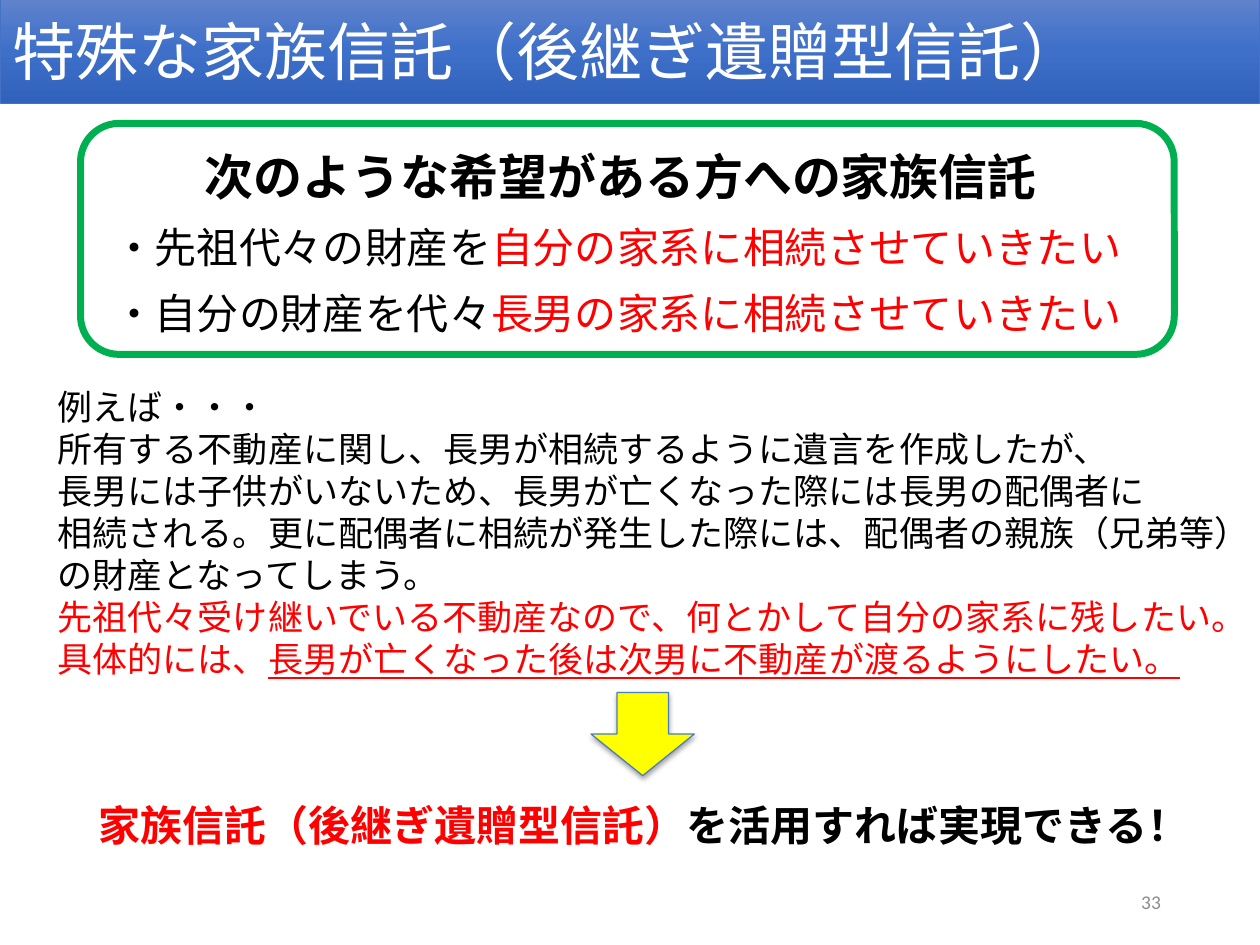
from copy import deepcopy

from lxml.etree import SubElement
from pptx import Presentation
from pptx.dml.color import RGBColor
from pptx.enum.shapes import MSO_SHAPE
from pptx.enum.text import MSO_ANCHOR, PP_ALIGN
from pptx.oxml.ns import qn
from pptx.util import Pt

COLORS = {
    "black": "000000", "red": "FF0000", "white": "FFFFFF", "gray": "8C8C8C",
    "green": "00B050", "yellow": "FFFF00", "bar_line": "4472C4", "arrow_line": "4B7EBC",
    "bar_top": "6183CB", "bar_middle": "3E70CA", "bar_bottom": "3062BB",
}
JAPANESE = "Noto Sans CJK JP"


def color(name):
    """Return the named color."""
    return RGBColor.from_string(COLORS[name])


def write(shape, lines, size, insets=(7.2, 3.6), font=JAPANESE, align=PP_ALIGN.LEFT,
          anchor=MSO_ANCHOR.TOP, **formats):
    """Fill a shape with lines, each a list of (text, color, formats) spans."""
    frame = shape.text_frame
    across, down = map(Pt, insets)
    settings = {"word_wrap": True, "vertical_anchor": anchor, "margin_left": across,
                "margin_right": across, "margin_top": down, "margin_bottom": down}
    for key, value in settings.items():
        setattr(frame, key, value)
    for index, spans in enumerate(lines):
        para = frame.add_paragraph() if index else frame.paragraphs[0]
        para.alignment = align
        para.line_spacing = Pt(size * 1.2)
        for text, name, *extra in spans:
            span = para.add_run()
            span.text = text
            span.font.color.rgb = color(name)
            values = {"name": font, "size": Pt(size), **formats, **(extra[0] if extra else {})}
            for key, value in values.items():
                setattr(span.font, key, value)
            SubElement(span.font._element, qn("a:ea"), typeface=font)


def add_text(page, box, lines, size, **options):
    """Add a text box holding the given lines."""
    write(page.shapes.add_textbox(*map(Pt, box)), lines, size, **options)


def add_outlined(page, kind, box, line, width):
    """Add a preset shape with a colored outline and no shadow."""
    shape = page.shapes.add_shape(kind, *map(Pt, box))
    shape.shadow.inherit = False
    shape.line.color.rgb = color(line)
    shape.line.width = Pt(width)
    return shape


def add_title_bar(page, box):
    """Draw the gradient bar with the slide title."""
    bar = add_outlined(page, MSO_SHAPE.RECTANGLE, box, "bar_line", 0.5)
    bar.fill.gradient()
    bar.fill.gradient_angle = 270
    first = bar._element.spPr.find(".//" + qn("a:gs"))
    first.addnext(deepcopy(first))
    names = ("bar_top", "bar_middle", "bar_bottom")
    for index, (stop, name) in enumerate(zip(bar.fill.gradient_stops, names)):
        stop.position = index / 2
        stop.color.rgb = color(name)
    write(bar, [[("特殊な家族信託（後継ぎ遺贈型信託）", "white")]], 36, anchor=MSO_ANCHOR.MIDDLE)


def add_wishes(page, box):
    """Draw the green panel with its heading and two wishes."""
    left, top, width, height = box
    panel = add_outlined(page, MSO_SHAPE.FLOWCHART_ALTERNATE_PROCESS, box, "green", 4)
    panel.fill.background()
    add_text(page, (left + 64, top + 9.5, 505, 41),
             [[("次のような希望がある方への家族信託", "black")]], 28, bold=True)
    wishes = [("・先祖代々の財産を", "自分の"), ("・自分の財産を代々", "長男の")]
    for index, (start, family) in enumerate(wishes):
        add_text(page, (left + 11.5, top + 52.5 + index * 38, width + 2, 36),
                 [[(start, "black"), (family + "家系に相続させていきたい", "red")]], 24)


def add_example(page, box):
    """Write the example, with the owner's wish in red."""
    story = [
        "例えば・・・",
        "所有する不動産に関し、長男が相続するように遺言を作成したが、",
        "長男には子供がいないため、長男が亡くなった際には長男の配偶者に",
        "相続される。更に配偶者に相続が発生した際には、配偶者の親族（兄弟等）の財産となってしまう。",
    ]
    lines = [[(text, "black")] for text in story]
    lines.append([("先祖代々受け継いでいる不動産なので、何とかして自分の家系に残したい。", "red")])
    lines.append([("具体的には、", "red"),
                  ("長男が亡くなった後は次男に不動産が渡るようにしたい。", "red", {"underline": True})])
    add_text(page, box, lines, 20, insets=(5, 2.2))


def add_arrow(page, box):
    """Draw the yellow arrow pointing down, with a soft shadow."""
    arrow = add_outlined(page, MSO_SHAPE.RIGHT_ARROW, box, "arrow_line", 0.75)
    arrow.rotation = 90
    arrow.fill.solid()
    arrow.fill.fore_color.rgb = color("yellow")
    effects = arrow._element.spPr.find(qn("a:effectLst"))
    shadow = SubElement(effects, qn("a:outerShdw"), blurRad=str(Pt(3.1)), dist=str(Pt(1.8)),
                        dir="5400000", rotWithShape="0")
    shade = SubElement(shadow, qn("a:srgbClr"), val=COLORS["black"])
    SubElement(shade, qn("a:alpha"), val="35000")


def add_conclusion(page, box):
    """Write the closing statement."""
    add_text(page, box, [[("家族信託（後継ぎ遺贈型信託）", "red"),
                          ("を活用すれば実現できる！", "black")]], 24, bold=True)


def add_page_number(page, box):
    """Write the page number."""
    add_text(page, box, [[("33", "gray")]], 11.1, font="Calibri",
             align=PP_ALIGN.RIGHT, anchor=MSO_ANCHOR.MIDDLE)


def main():
    """Build and save the deck."""
    deck = Presentation()
    deck.slide_width, deck.slide_height = Pt(720), Pt(540)
    page = deck.slides.add_slide(deck.slide_layouts[6])
    add_wishes(page, (46, 70.5, 625, 132))
    add_page_number(page, (508.5, 500.5, 162, 29))
    add_title_bar(page, (0, -1.5, 720, 60.5))
    add_example(page, (28, 218, 692, 174))
    add_arrow(page, (343.5, 390, 47.5, 59))
    add_conclusion(page, (49, 453.5, 671, 36))
    deck.save("out.pptx")


if __name__ == "__main__":
    main()
